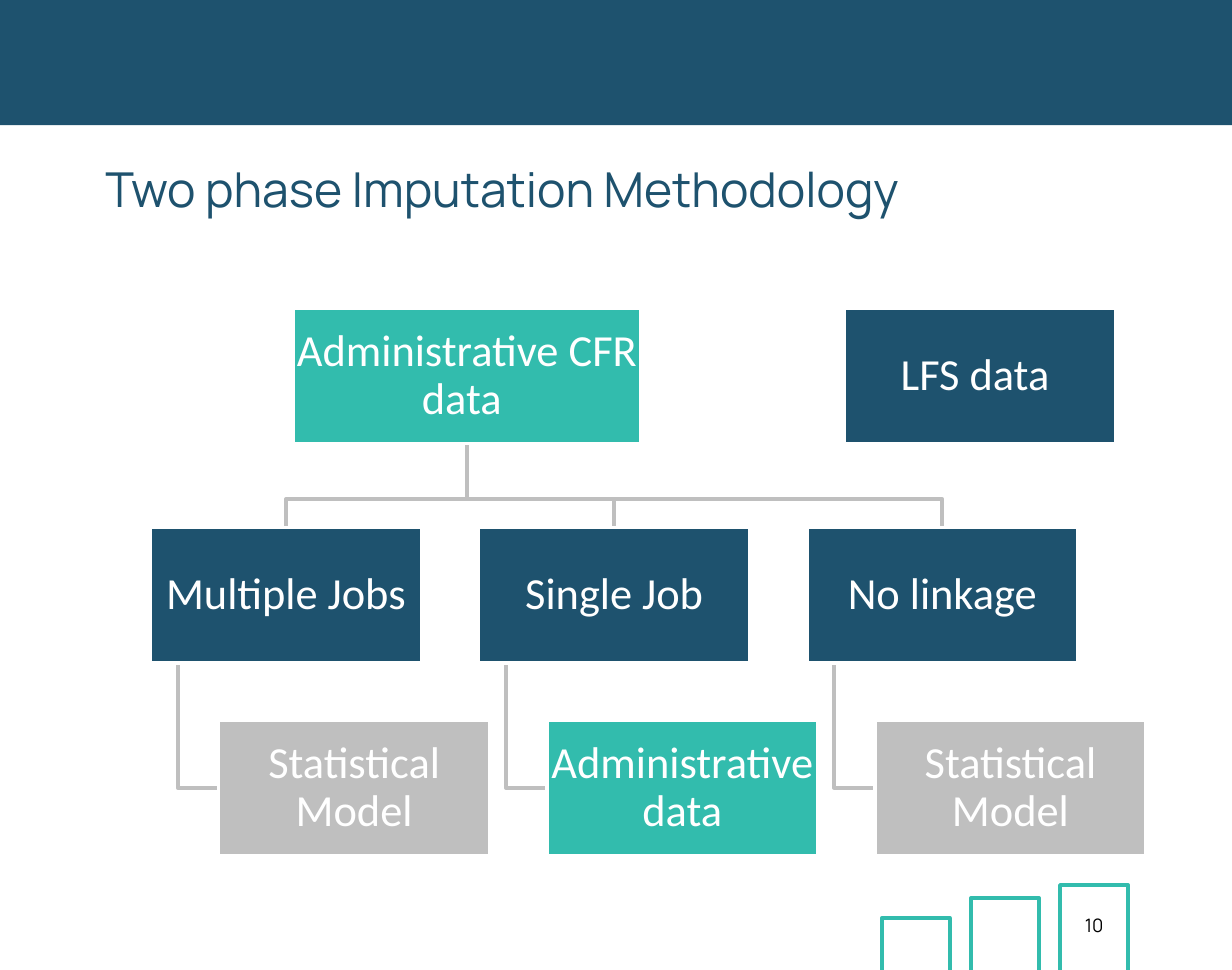
"""Build the slide on the two phase imputation methodology."""
from dataclasses import dataclass

from pptx import Presentation
from pptx.dml.color import RGBColor
from pptx.enum.shapes import MSO_SHAPE
from pptx.enum.text import MSO_ANCHOR, MSO_AUTO_SIZE, PP_ALIGN
from pptx.shapes.autoshape import Shape
from pptx.slide import Slide
from pptx.text.text import TextFrame
from pptx.util import Cm, Pt

RECTANGLE = MSO_SHAPE.RECTANGLE
TOP, MIDDLE = MSO_ANCHOR.TOP, MSO_ANCHOR.MIDDLE
LEFT, CENTER = PP_ALIGN.LEFT, PP_ALIGN.CENTER
FIXED_SIZE = MSO_AUTO_SIZE.NONE

NAVY = RGBColor(0x1E, 0x52, 0x6E)
TEAL = RGBColor(0x32, 0xBC, 0xAD)
GREY = RGBColor(0xBF, 0xBF, 0xBF)
WHITE = RGBColor(0xFF, 0xFF, 0xFF)
BLACK = RGBColor(0x00, 0x00, 0x00)

PAGE_WIDTH, PAGE_HEIGHT = 23.5, 18.5
NODE_WIDTH, NODE_HEIGHT = 5.17, 2.59
ROOT_TOP, BRANCH_TOP, RESULT_TOP = 5.87, 10.06, 13.73
BRANCH_LEFT, BRANCH_PITCH = 2.87, 6.26
RESULT_INDENT, STEM_INDENT = 1.3, 0.52
TRUNK_Y = 9.52
BAR_LEFT, BAR_PITCH, BAR_BOTTOM = 16.82, 1.7, 18.93
BAR_WIDTH = 1.3
BAR_TOPS = (17.51, 17.13, 16.88)


@dataclass
class Node:
    """A labelled box of the diagram, measured in centimetres."""

    label: str
    fill: RGBColor
    left: float
    top: float
    width: float = NODE_WIDTH

    @property
    def center(self) -> float:
        return self.left + self.width / 2

    @property
    def bottom(self) -> float:
        return self.top + NODE_HEIGHT


@dataclass
class Branch:
    """A case of the administrative data and how it is imputed."""

    label: str
    result: str
    result_fill: RGBColor


BRANCHES = (
    Branch("Multiple Jobs", "Statistical Model", GREY),
    Branch("Single Job", "Administrative data", TEAL),
    Branch("No linkage", "Statistical Model", GREY),
)


def write_text(frame: TextFrame, text: str, font: str, size: float,
               color: RGBColor, align: PP_ALIGN, anchor: MSO_ANCHOR,
               inset: float = 0) -> None:
    """Fill a text frame with one formatted paragraph."""
    frame.word_wrap = True
    frame.auto_size = FIXED_SIZE
    frame.vertical_anchor = anchor
    frame.margin_left = frame.margin_right = Cm(inset)
    frame.margin_top = frame.margin_bottom = Cm(inset)
    para = frame.paragraphs[0]
    para.text = text
    para.alignment = align
    para.font.name = font
    para.font.size = Pt(size)
    para.font.color.rgb = color


def add_box(page: Slide, left: float, top: float, width: float,
            height: float) -> Shape:
    """Add a rectangle without shadow."""
    box = page.shapes.add_shape(RECTANGLE, Cm(left), Cm(top), Cm(width), Cm(height))
    box.shadow.inherit = False
    return box


def set_line(shape: Shape, color: RGBColor) -> None:
    """Give a shape its two point outline."""
    shape.line.color.rgb = color
    shape.line.width = Pt(2)


def add_node(page: Slide, node: Node) -> None:
    """Draw one box of the diagram."""
    box = add_box(page, node.left, node.top, node.width, NODE_HEIGHT)
    box.fill.solid()
    box.fill.fore_color.rgb = node.fill
    set_line(box, WHITE)
    write_text(box.text_frame, node.label, "Calibri", 24, WHITE, CENTER, MIDDLE, 0.04)
    box.text_frame.paragraphs[0].line_spacing = 0.9


def add_elbow(page: Slide, points: list[tuple[float, float]]) -> None:
    """Draw an open grey line through the points."""
    start, *others = [(Cm(x), Cm(y)) for x, y in points]
    builder = page.shapes.build_freeform(*start)
    builder.add_line_segments(others, close=False)
    elbow = builder.convert_to_shape()
    elbow.shadow.inherit = False
    elbow.fill.background()
    set_line(elbow, GREY)


def add_frame(page: Slide) -> None:
    """Draw the header band, the title, the bars and the page number."""
    band = add_box(page, 0, 0, PAGE_WIDTH, 2.39)
    band.fill.solid()
    band.fill.fore_color.rgb = NAVY
    band.line.fill.background()

    for index, top in enumerate(BAR_TOPS):
        bar = add_box(page, BAR_LEFT + index * BAR_PITCH, top, BAR_WIDTH, BAR_BOTTOM - top)
        bar.fill.background()
        set_line(bar, TEAL)

    title = page.shapes.title
    title.left, title.top = Cm(2.01), Cm(3.05)
    title.width, title.height = Cm(20.24), Cm(2.49)
    write_text(title.text_frame, "Two phase Imputation Methodology", "Manrope", 26,
               NAVY, LEFT, TOP)

    number_left = BAR_LEFT + 2 * BAR_PITCH
    number = page.shapes.add_textbox(Cm(number_left), Cm(17.36), Cm(BAR_WIDTH), Cm(0.48))
    write_text(number.text_frame, "10", "Manrope", 10, BLACK, CENTER, TOP)
    number.text_frame.paragraphs[0].line_spacing = Pt(14.2)


def add_diagram(page: Slide) -> None:
    """Draw the tree of data sources, with its lines behind the boxes."""
    root = Node("Administrative CFR data ", TEAL, 5.59, ROOT_TOP, 6.63)
    nodes = [root, Node("LFS data ", NAVY, 16.11, ROOT_TOP)]
    for index, branch in enumerate(BRANCHES):
        left = BRANCH_LEFT + index * BRANCH_PITCH
        case = Node(branch.label, NAVY, left, BRANCH_TOP)
        result = Node(branch.result, branch.result_fill, left + RESULT_INDENT, RESULT_TOP)
        nodes += [case, result]
        add_elbow(page, [(root.center, root.bottom), (root.center, TRUNK_Y),
                         (case.center, TRUNK_Y), (case.center, case.top)])
        stem = left + STEM_INDENT
        middle = result.top + NODE_HEIGHT / 2
        add_elbow(page, [(stem, case.bottom), (stem, middle), (result.left, middle)])
    for node in nodes:
        add_node(page, node)


def main() -> None:
    """Build and save the deck."""
    deck = Presentation()
    deck.slide_width, deck.slide_height = Cm(PAGE_WIDTH), Cm(PAGE_HEIGHT)
    page = deck.slides.add_slide(deck.slide_layouts[5])
    add_frame(page)
    add_diagram(page)
    deck.save("out.pptx")


if __name__ == "__main__":
    main()
